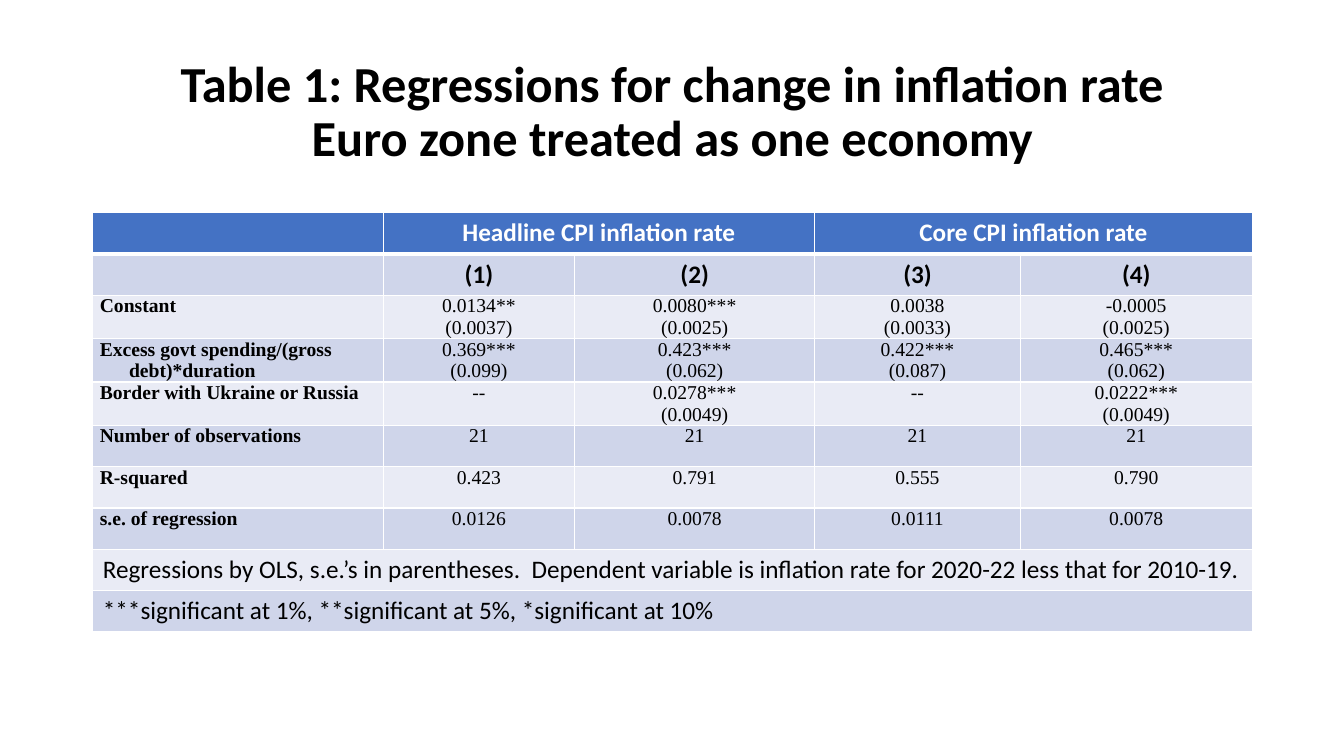
import pptx
import pptx.dml.color
import pptx.enum.text
import pptx.oxml
import pptx.oxml.ns
import pptx.util

PX = 9144  # 100 px to the inch
COLORS = {"header": "4472C4", "dark": "CFD5EA", "light": "E9EBF5",
          "white": "FFFFFF", "black": "000000"}
ALIGN = pptx.enum.text.PP_ALIGN

TITLE = ("Table 1: Regressions for change in inflation rate\v"
         "Euro zone treated as one economy")
COLUMN_WIDTHS = [288, 190, 238, 204, 230]
ROW_HEIGHT = 41
HEADINGS = [
    ["", "Headline CPI inflation rate", "", "Core CPI inflation rate", ""],
    ["", "(1)", "(2)", "(3)", "(4)"],
]
RESULTS = [
    ["Constant", "0.0134**\n(0.0037)", "0.0080***\n(0.0025)",
     "0.0038\n(0.0033)", "-0.0005\n(0.0025)"],
    ["Excess govt spending/(gross\ndebt)*duration", "0.369***\n(0.099)",
     "0.423***\n(0.062)", "0.422***\n(0.087)", "0.465***\n(0.062)"],
    ["Border with Ukraine or Russia", "--", "0.0278***\n(0.0049)",
     "--", "0.0222***\n(0.0049)"],
    ["Number of observations", "21", "21", "21", "21"],
    ["R-squared", "0.423", "0.791", "0.555", "0.790"],
    ["s.e. of regression", "0.0126", "0.0078", "0.0111", "0.0078"],
]
NOTES = [
    ["Regressions by OLS, s.e.’s in parentheses.  Dependent variable is "
     "inflation rate for 2020-22 less that for 2010-19.", "", "", "", ""],
    ["***significant at 1%, **significant at 5%, *significant at 10%",
     "", "", "", ""],
]


def px(length):
    return pptx.util.Emu(length * PX)


def rgb(name):
    return pptx.dml.color.RGBColor.from_string(COLORS[name])


def style_paragraph(para, align, size, bold, color="black", font="Calibri"):
    para.alignment = align
    para.font.name = font
    para.font.size = pptx.util.Pt(size)
    para.font.bold = bold
    para.font.color.rgb = rgb(color)


def add_title(page, left, top, width, height):
    box = page.shapes.title
    box.left, box.top, box.width, box.height = map(px, (left, top, width, height))
    frame = box.text_frame
    frame.text = TITLE
    frame.word_wrap = True
    frame.vertical_anchor = pptx.enum.text.MSO_ANCHOR.MIDDLE
    para = frame.paragraphs[0]
    para.line_spacing = 0.9
    style_paragraph(para, ALIGN.CENTER, 36, True)


def paint_cell(cell, fill, bottom_width):
    """Give the cell white borders, then its fill, in the order the schema asks."""
    properties = cell._tc.get_or_add_tcPr()
    for side, points in (("L", 1), ("R", 1), ("T", 1), ("B", bottom_width)):
        properties.append(pptx.oxml.parse_xml(
            f'<a:ln{side} {pptx.oxml.ns.nsdecls("a")} w="{pptx.util.Pt(points)}">'
            f'<a:solidFill><a:srgbClr val="{COLORS["white"]}"/></a:solidFill>'
            f'</a:ln{side}>'))
    cell.fill.solid()
    cell.fill.fore_color.rgb = rgb(fill)


def write_heading(cell, text, color):
    cell.text = text
    style_paragraph(cell.text_frame.paragraphs[0], ALIGN.CENTER, 18, True, color)


def write_result(cell, text, is_label):
    cell.margin_left = cell.margin_right = px(7)
    cell.margin_top = cell.margin_bottom = 0
    cell.text = text
    for line, para in enumerate(cell.text_frame.paragraphs):
        style_paragraph(para, ALIGN.LEFT if is_label else ALIGN.CENTER,
                        14, is_label, font="Times New Roman")
        if is_label and line:
            para._p.get_or_add_pPr().set("marL", str(px(29)))


def write_note(cell, text):
    cell.text = text
    style_paragraph(cell.text_frame.paragraphs[0], ALIGN.LEFT, 18, False)


def add_regression_table(page, left, top):
    rows = HEADINGS + RESULTS + NOTES
    first_note = len(HEADINGS) + len(RESULTS)
    table = page.shapes.add_table(
        len(rows), len(COLUMN_WIDTHS), px(left), px(top),
        px(sum(COLUMN_WIDTHS)), px(ROW_HEIGHT * len(rows))).table
    for column, width in zip(table.columns, COLUMN_WIDTHS):
        column.width = px(width)
    for r, texts in enumerate(rows):
        table.rows[r].height = px(ROW_HEIGHT)
        fill = "header" if r == 0 else "dark" if r % 2 else "light"
        for c, text in enumerate(texts):
            cell = table.cell(r, c)
            paint_cell(cell, fill, 1 if r else 3)
            if r < len(HEADINGS):
                write_heading(cell, text, "black" if r else "white")
            elif r < first_note:
                write_result(cell, text, c == 0)
            else:
                write_note(cell, text)
    for c in (1, 3):
        table.cell(0, c).merge(table.cell(0, c + 1))
    for r in range(first_note, len(rows)):
        table.cell(r, 0).merge(table.cell(r, len(COLUMN_WIDTHS) - 1))


def main():
    deck = pptx.Presentation()
    deck.slide_width, deck.slide_height = px(1333), px(750)
    page = deck.slides.add_slide(deck.slide_layouts[5])
    add_title(page, 92, 40, 1150, 145)
    add_regression_table(page, 92, 211)
    deck.save("out.pptx")


if __name__ == "__main__":
    main()
